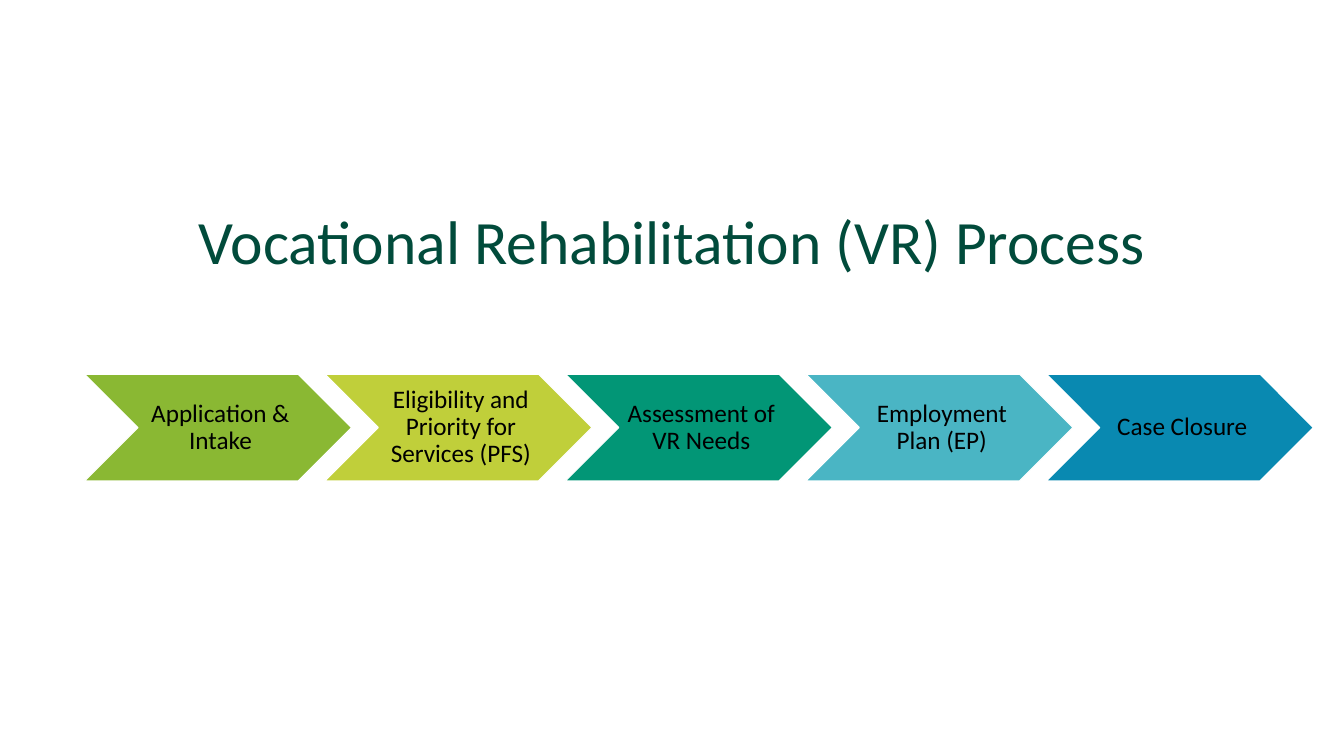
import pptx
import pptx.util
import pptx.dml.color
import pptx.enum.shapes
import pptx.enum.text

Cm = pptx.util.Cm
Pt = pptx.util.Pt
RGBColor = pptx.dml.color.RGBColor

FONT = "Calibri"
DARK_GREEN = RGBColor(0x01, 0x4B, 0x3B)
BLACK = RGBColor(0x00, 0x00, 0x00)
WHITE = RGBColor(0xFF, 0xFF, 0xFF)
LEAF = RGBColor(0x8A, 0xB8, 0x33)
LIME = RGBColor(0xC0, 0xCF, 0x3A)
TEAL = RGBColor(0x02, 0x96, 0x76)
AQUA = RGBColor(0x4A, 0xB5, 0xC4)
BLUE = RGBColor(0x09, 0x89, 0xB1)

STEPS = [
    ("Application & Intake", LEAF),
    ("Eligibility and Priority for Services (PFS)", LIME),
    ("Assessment of VR Needs", TEAL),
    ("Employment Plan (EP)", AQUA),
    ("Case Closure", BLUE),
]


def add_run(p, text, size, color):
    r = p.add_run()
    r.text = text
    r.font.name = FONT
    r.font.size = Pt(size)
    r.font.color.rgb = color


prs = pptx.Presentation()
prs.slide_width = Cm(33.87)
prs.slide_height = Cm(19.05)
s = prs.slides.add_slide(prs.slide_layouts[5])

# Title
title = s.shapes.title
title.left, title.top, title.width, title.height = Cm(2.13), Cm(4.98), Cm(29.62), Cm(2.13)
tf = title.text_frame
tf.word_wrap = True
tf.vertical_anchor = pptx.enum.text.MSO_ANCHOR.MIDDLE
p = tf.paragraphs[0]
p.alignment = pptx.enum.text.PP_ALIGN.CENTER
add_run(p, "Vocational Rehabilitation (VR) Process", 44, DARK_GREEN)

# Process chevrons, evenly spaced, each with its label
left, top, width, height, pitch = 2.13, 9.43, 6.73, 2.69, 6.06
for i, (label, color) in enumerate(STEPS):
    sp = s.shapes.add_shape(pptx.enum.shapes.MSO_SHAPE.CHEVRON,
                            Cm(left + i * pitch), Cm(top), Cm(width), Cm(height))
    sp.shadow.inherit = False
    sp.fill.solid()
    sp.fill.fore_color.rgb = color
    sp.line.color.rgb = WHITE
    sp.line.width = Pt(0.85)
    tf = sp.text_frame
    tf.word_wrap = True
    tf.vertical_anchor = pptx.enum.text.MSO_ANCHOR.MIDDLE
    tf.margin_left = Cm(0.2)
    tf.margin_right = tf.margin_top = tf.margin_bottom = Cm(0.08)
    p = tf.paragraphs[0]
    p.alignment = pptx.enum.text.PP_ALIGN.CENTER
    p.line_spacing = 0.9
    add_run(p, label, 18, BLACK)

prs.save("out.pptx")
